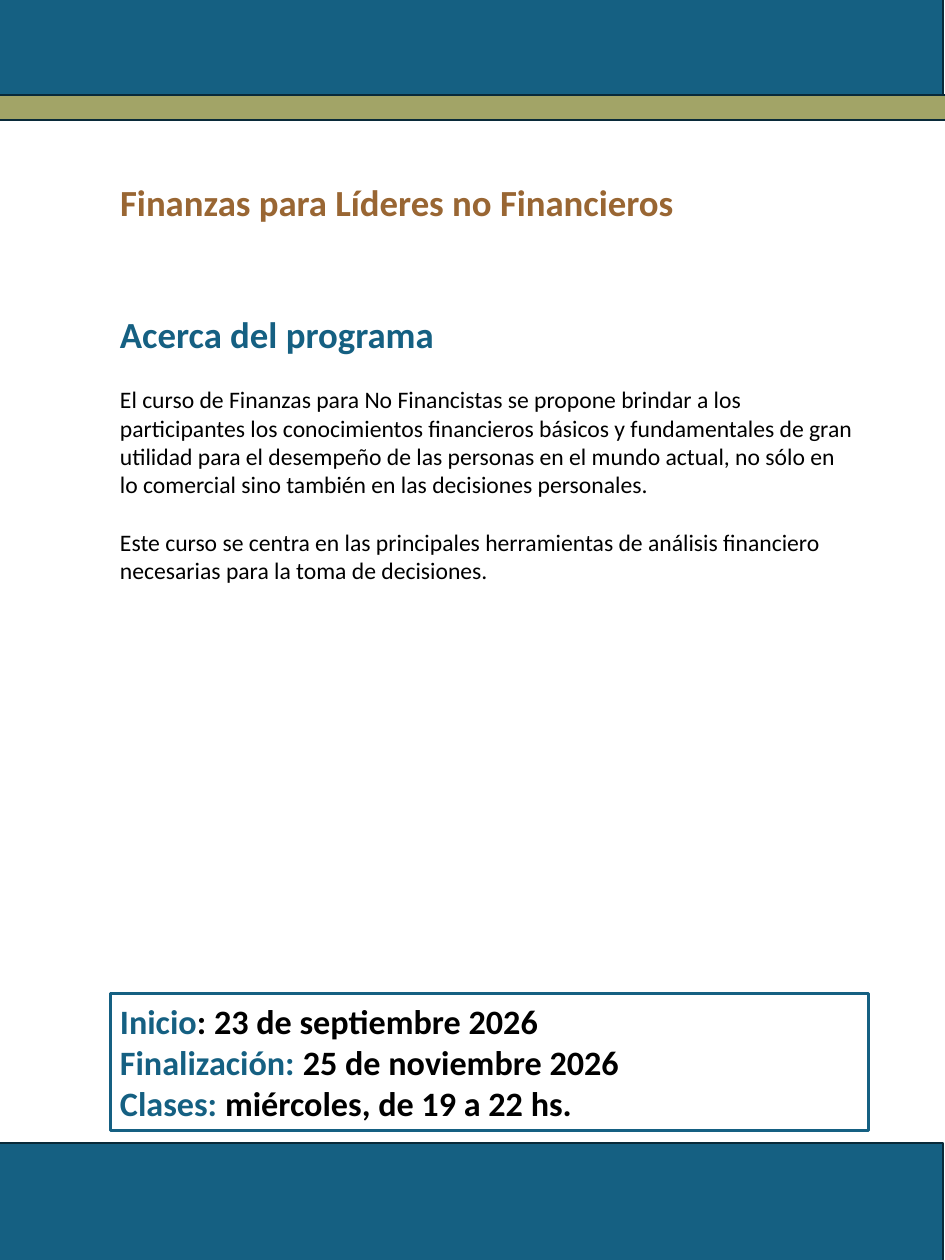
from pptx import Presentation
from pptx.dml.color import RGBColor
from pptx.enum.shapes import MSO_SHAPE as Preset
from pptx.enum.text import MSO_ANCHOR as Anchor, PP_ALIGN as Align
from pptx.util import Inches, Pt

BLUE = RGBColor(0x15, 0x60, 0x82)
NAVY = RGBColor(0x09, 0x2A, 0x39)
OLIVE = RGBColor(0xA2, 0xA4, 0x67)
BROWN = RGBColor(0x99, 0x66, 0x33)
BLACK = RGBColor(0, 0, 0)

LEFT, COLUMN = Inches(1.17), Inches(7.98)
BAND_LEFT, BAND_WIDTH = Inches(-0.02), Inches(9.99)


def style(run, size, color, bold=True):
    run.font.name = "Calibri"
    run.font.size = Pt(size)
    run.font.bold = bold
    run.font.color.rgb = color


def add_box(left, top, width, height, line_color, weight):
    box = slide.shapes.add_shape(Preset.RECTANGLE, left, top, width, height)
    box.shadow.inherit = False
    box.line.color.rgb = line_color
    box.line.width = Pt(weight)
    return box


deck = Presentation()
deck.slide_width, deck.slide_height = Inches(9.99), Inches(13.32)
slide = deck.slides.add_slide(deck.slide_layouts[5])

course = slide.shapes.title
course.left, course.top, course.width, course.height = LEFT, Inches(1.85), COLUMN, Inches(0.6)
course.text_frame.text = "Finanzas para Líderes no Financieros"
course.text_frame.vertical_anchor = Anchor.TOP
course.text_frame.paragraphs[0].alignment = Align.LEFT
style(course.text_frame.paragraphs[0].runs[0], 28, BROWN)

about = slide.shapes.add_textbox(LEFT, Inches(3.25), COLUMN, Inches(3)).text_frame
about.word_wrap = True
about.text = "\n".join([
    "Acerca del programa",
    "El curso de Finanzas para No Financistas se propone brindar a los participantes "
    "los conocimientos financieros básicos y fundamentales de gran utilidad para el "
    "desempeño de las personas en el mundo actual, no sólo en lo comercial sino "
    "también en las decisiones personales.",
    "Este curso se centra en las principales herramientas de análisis financiero "
    "necesarias para la toma de decisiones.",
])
heading, *descriptions = about.paragraphs
style(heading.runs[0], 28, BLUE)
for description in descriptions:
    description.space_before = Pt(22)
    style(description.runs[0], 18, BLACK, bold=False)

for top, width, height, color in [
    (12.08, BAND_WIDTH, 1.27, BLUE),
    (-0.05, BAND_WIDTH, 1.14, BLUE),
    (1, Inches(10.02), 0.27, OLIVE),
]:
    band = add_box(BAND_LEFT, Inches(top), width, Inches(height), NAVY, 1.5)
    band.fill.solid()
    band.fill.fore_color.rgb = color

schedule = add_box(LEFT, Inches(10.5), Inches(8.01), Inches(1.45), BLUE, 2.25)
schedule.fill.background()
dates = schedule.text_frame
dates.word_wrap = True
dates.vertical_anchor = Anchor.MIDDLE
for index, (label, value) in enumerate([
    ("Inicio", ": 23 de septiembre 2026"),
    ("Finalización: ", "25 de noviembre 2026"),
    ("Clases: ", "miércoles, de 19 a 22 hs."),
]):
    entry = dates.add_paragraph() if index else dates.paragraphs[0]
    entry.alignment = Align.LEFT
    for words, color in [(label, BLUE), (value, BLACK)]:
        run = entry.add_run()
        run.text = words
        style(run, 26, color)

deck.save("out.pptx")
